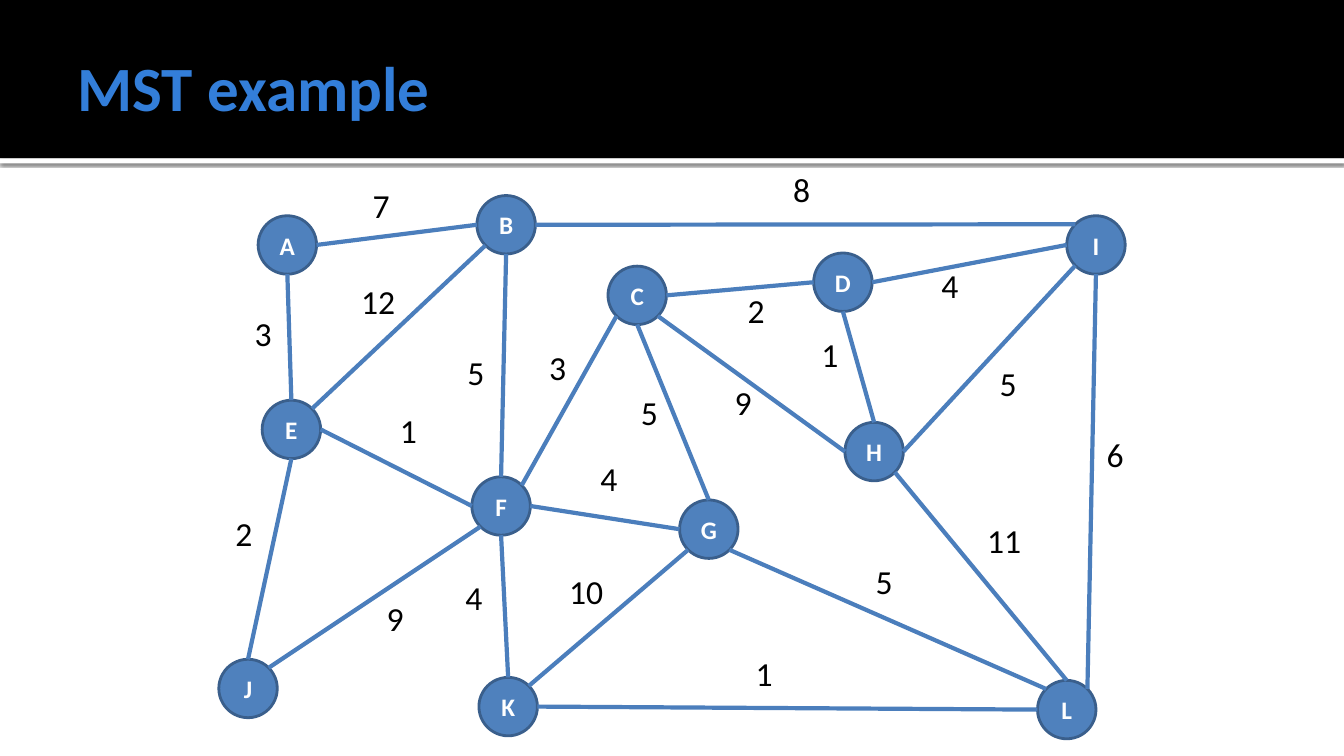
import dataclasses
import enum
import math

import lxml.etree
import pptx
import pptx.dml.color
import pptx.enum.shapes
import pptx.enum.text
import pptx.oxml
import pptx.oxml.ns
import pptx.shapes.autoshape
import pptx.shapes.connector
import pptx.slide
import pptx.text.text
import pptx.util

EMU_PER_PX = 9144
NODE_SIZE = 58
LABEL_HEIGHT = 50
FONT = "Calibri"
COLORS = {
    "band": "000000",
    "rule": "FFFFFF",
    "title": "337ED9",
    "node": "4F81BD",
    "node_outline": "3A5F8C",
    "node_text": "FFFFFF",
    "edge": "4B7EBC",
    "weight": "000000",
}


class Site(enum.IntEnum):
    TOP = 0
    TOP_LEFT = 1
    LEFT = 2
    BOTTOM_LEFT = 3
    BOTTOM = 4
    BOTTOM_RIGHT = 5
    RIGHT = 6
    TOP_RIGHT = 7


@dataclasses.dataclass(frozen=True)
class Node:
    name: str
    left: int
    top: int

    def point(self, site: Site) -> tuple[int, int]:
        angle = math.radians(90 + 45 * site)
        radius = NODE_SIZE / 2
        return (
            px(self.left + radius + radius * math.cos(angle)),
            px(self.top + radius - radius * math.sin(angle)),
        )


@dataclasses.dataclass(frozen=True)
class Edge:
    start: str
    start_site: Site
    end: str
    end_site: Site
    weight: int
    label_left: int
    label_top: int
    label_width: int = 50


NODES = [
    Node("A", 256, 214),
    Node("L", 1029, 675),
    Node("I", 1058, 214),
    Node("F", 468, 473),
    Node("B", 473, 194),
    Node("E", 260, 397),
    Node("G", 674, 496),
    Node("C", 603, 264),
    Node("J", 217, 654),
    Node("H", 838, 419),
    Node("K", 475, 672),
    Node("D", 807, 251),
]

EDGES = [
    Edge("B", Site.BOTTOM, "F", Site.TOP, 5, 447, 344),
    Edge("A", Site.RIGHT, "B", Site.LEFT, 7, 353, 178),
    Edge("E", Site.RIGHT, "F", Site.LEFT, 1, 380, 402),
    Edge("F", Site.BOTTOM, "K", Site.TOP, 4, 445, 567),
    Edge("F", Site.BOTTOM_LEFT, "J", Site.TOP_RIGHT, 9, 367, 588),
    Edge("C", Site.BOTTOM_LEFT, "F", Site.TOP_RIGHT, 3, 528, 339),
    Edge("G", Site.BOTTOM_LEFT, "K", Site.TOP_RIGHT, 10, 550, 561, 63),
    Edge("C", Site.RIGHT, "D", Site.LEFT, 2, 725, 283),
    Edge("I", Site.BOTTOM, "L", Site.TOP_RIGHT, 6, 1081, 425),
    Edge("H", Site.BOTTOM_RIGHT, "L", Site.TOP, 11, 963, 511, 66),
    Edge("C", Site.BOTTOM, "G", Site.TOP, 5, 619, 384),
    Edge("G", Site.BOTTOM_RIGHT, "L", Site.TOP_LEFT, 5, 852, 551),
    Edge("H", Site.RIGHT, "I", Site.BOTTOM_LEFT, 5, 975, 355),
    Edge("D", Site.RIGHT, "I", Site.LEFT, 4, 917, 258),
    Edge("E", Site.BOTTOM, "J", Site.TOP, 2, 217, 504),
    Edge("A", Site.BOTTOM, "E", Site.TOP, 3, 236, 305),
    Edge("B", Site.RIGHT, "I", Site.TOP_LEFT, 8, 770, 163),
    Edge("L", Site.LEFT, "K", Site.RIGHT, 1, 733, 643),
    Edge("C", Site.BOTTOM_RIGHT, "H", Site.LEFT, 9, 712, 374),
    Edge("D", Site.BOTTOM, "H", Site.TOP, 1, 798, 326),
    Edge("G", Site.LEFT, "F", Site.RIGHT, 4, 579, 449),
    Edge("B", Site.BOTTOM_LEFT, "E", Site.TOP_RIGHT, 12, 344, 274, 62),
]


def px(length: float) -> int:
    return round(length * EMU_PER_PX)


def rgb(name: str) -> pptx.dml.color.RGBColor:
    return pptx.dml.color.RGBColor.from_string(COLORS[name])


def write(
    frame: pptx.text.text.TextFrame, text: str, size: int, color: str,
    bold: bool, align: pptx.enum.text.PP_ALIGN,
) -> None:
    frame.text = text
    frame.vertical_anchor = pptx.enum.text.MSO_ANCHOR.MIDDLE
    paragraph = frame.paragraphs[0]
    paragraph.alignment = align
    font = paragraph.runs[0].font
    font.name = FONT
    font.size = pptx.util.Pt(size)
    font.bold = bold
    font.color.rgb = rgb(color)


def add_band(
    slide: pptx.slide.Slide, top: int, height: int, color: str
) -> pptx.shapes.autoshape.Shape:
    band = slide.shapes.add_shape(
        pptx.enum.shapes.MSO_SHAPE.RECTANGLE, 0, px(top), px(1333), px(height)
    )
    band.shadow.inherit = False
    band.fill.solid()
    band.fill.fore_color.rgb = rgb(color)
    band.line.fill.background()
    return band


def add_header(slide: pptx.slide.Slide) -> None:
    rule = add_band(slide, 157, 5, "rule")
    effects = rule.element.spPr.find(pptx.oxml.ns.qn("a:effectLst"))
    effects.append(pptx.oxml.parse_xml(
        f'<a:outerShdw {pptx.oxml.ns.nsdecls("a")} blurRad="31750" dist="10160" '
        'dir="5400000" algn="tl" rotWithShape="0"><a:srgbClr val="000000">'
        '<a:alpha val="60000"/></a:srgbClr></a:outerShdw>'
    ))
    add_band(slide, 0, 157, "band")

    title = slide.shapes.title
    title.element.getparent().append(title.element)
    title.left, title.top, title.width, title.height = map(px, (67, 17, 1200, 137))
    frame = title.text_frame
    write(frame, "MST example", 45, "title", True, pptx.enum.text.PP_ALIGN.LEFT)
    frame.margin_left = px(10)
    frame.margin_top = frame.margin_right = frame.margin_bottom = px(5)


def add_node(slide: pptx.slide.Slide, node: Node) -> pptx.shapes.autoshape.Shape:
    circle = slide.shapes.add_shape(
        pptx.enum.shapes.MSO_SHAPE.OVAL,
        px(node.left), px(node.top), px(NODE_SIZE), px(NODE_SIZE),
    )
    circle.shadow.inherit = False
    circle.fill.solid()
    circle.fill.fore_color.rgb = rgb("node")
    circle.line.color.rgb = rgb("node_outline")
    circle.line.width = pptx.util.Pt(2)
    write(circle.text_frame, node.name, 18, "node_text", True,
          pptx.enum.text.PP_ALIGN.CENTER)
    return circle


def add_edge(
    slide: pptx.slide.Slide, edge: Edge, nodes: dict[str, Node],
    circles: dict[str, pptx.shapes.autoshape.Shape],
) -> None:
    link = slide.shapes.add_connector(
        pptx.enum.shapes.MSO_CONNECTOR.STRAIGHT,
        *nodes[edge.start].point(edge.start_site),
        *nodes[edge.end].point(edge.end_site),
    )
    link.line.color.rgb = rgb("edge")
    link.line.width = pptx.util.Pt(3)
    qn = pptx.oxml.ns.qn
    lxml.etree.SubElement(link.element.spPr, qn("a:effectLst"))
    joints = link.element.find(f"{qn('p:nvCxnSpPr')}/{qn('p:cNvCxnSpPr')}")
    for tag, name, site in (
        ("a:stCxn", edge.start, edge.start_site),
        ("a:endCxn", edge.end, edge.end_site),
    ):
        lxml.etree.SubElement(
            joints, qn(tag), id=str(circles[name].shape_id), idx=str(site.value)
        )


def add_weight(slide: pptx.slide.Slide, edge: Edge) -> None:
    label = slide.shapes.add_textbox(
        px(edge.label_left), px(edge.label_top), px(edge.label_width), px(LABEL_HEIGHT)
    )
    frame = label.text_frame
    frame.word_wrap = True
    frame.auto_size = pptx.enum.text.MSO_AUTO_SIZE.SHAPE_TO_FIT_TEXT
    write(frame, str(edge.weight), 24, "weight", False, pptx.enum.text.PP_ALIGN.CENTER)


def main() -> None:
    deck = pptx.Presentation()
    deck.slide_width, deck.slide_height = px(1333), px(750)
    slide = deck.slides.add_slide(deck.slide_layouts[5])
    add_header(slide)
    nodes = {node.name: node for node in NODES}
    circles = {node.name: add_node(slide, node) for node in NODES}
    for edge in EDGES:
        add_edge(slide, edge, nodes, circles)
    for edge in EDGES:
        add_weight(slide, edge)
    deck.save("out.pptx")


if __name__ == "__main__":
    main()
